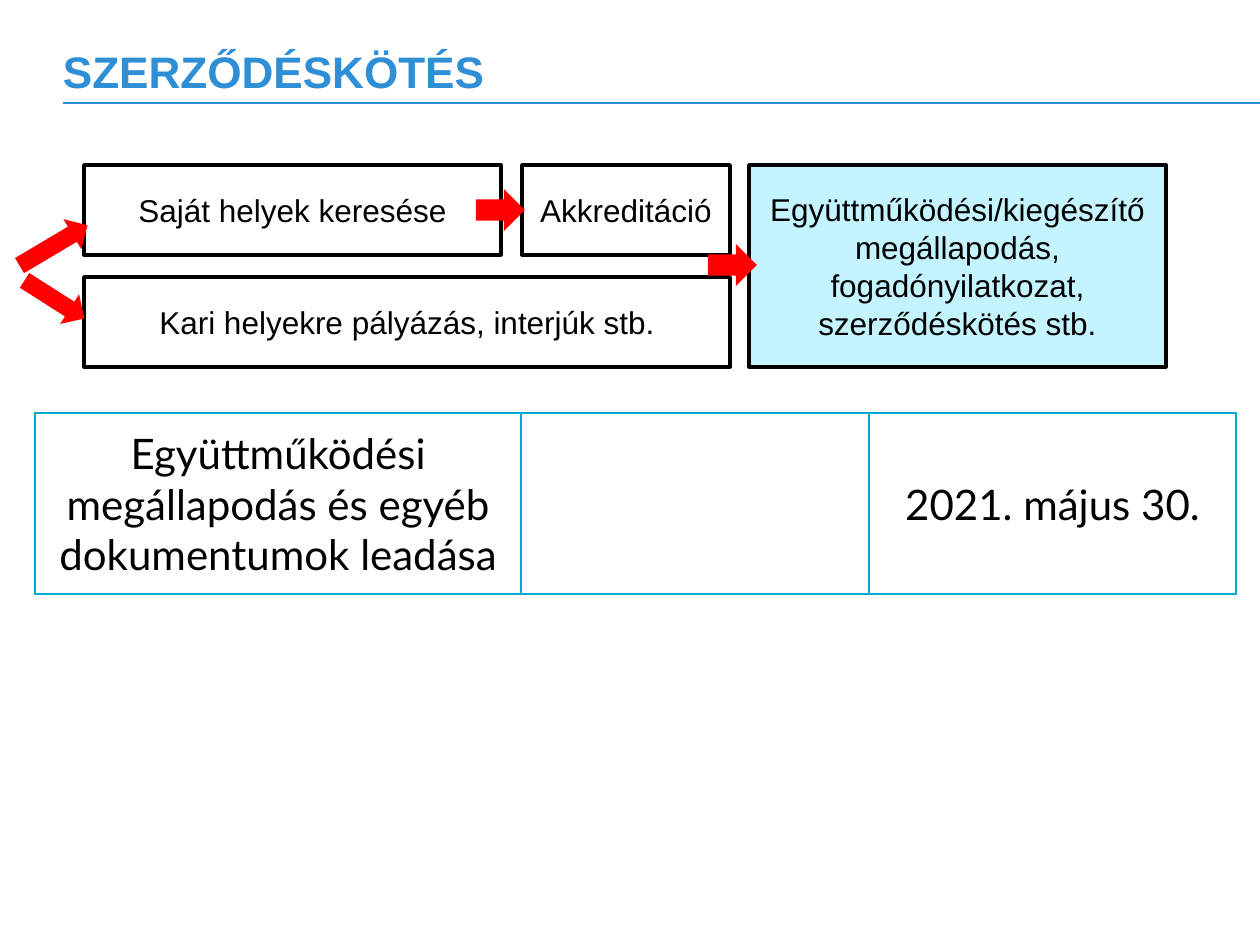
"""Build the contracting slide with its process flow and deadline table."""
from dataclasses import dataclass

from lxml.etree import SubElement
from pptx import Presentation
from pptx.dml.color import RGBColor
from pptx.enum.shapes import MSO_CONNECTOR, MSO_SHAPE
from pptx.enum.text import MSO_ANCHOR, PP_ALIGN
from pptx.oxml.ns import qn
from pptx.slide import Slide
from pptx.table import _Cell
from pptx.text.text import TextFrame
from pptx.util import Emu, Pt

PX_PER_INCH = 126
BLUE = RGBColor(0x2E, 0x8F, 0xD6)
BLACK = RGBColor(0x00, 0x00, 0x00)
WHITE = RGBColor(0xFF, 0xFF, 0xFF)
PALE_CYAN = RGBColor(0xC3, 0xF4, 0xFF)
RED = RGBColor(0xFF, 0x00, 0x00)
TEAL = RGBColor(0x00, 0xAB, 0xD1)

TITLE_FORMAT = {"name": "Arial", "size": Pt(25.2), "bold": True}
STEP_FORMAT = {"name": "Arial", "size": Pt(18)}
DEADLINE_FORMAT = {"name": "Lato", "size": Pt(24)}


@dataclass(frozen=True)
class Step:
    text: str
    left: int
    top: int
    width: int
    height: int = 90
    fill: RGBColor = WHITE


@dataclass(frozen=True)
class Arrow:
    left: int
    top: int
    width: int
    height: int
    rotation: float = 0


STEPS = (
    Step("Saját helyek keresése", 84, 165, 417),
    Step("Kari helyekre pályázás, interjúk stb.", 84, 277, 646),
    Step("Akkreditáció", 522, 165, 208),
    Step("Együttműködési/kiegészítő megállapodás, fogadónyilatkozat, "
         "szerződéskötés stb.", 749, 165, 417, 202, PALE_CYAN),
)
ARROWS = (
    Arrow(19, 282, 71, 35, 32.5),
    Arrow(476, 189, 49, 42),
    Arrow(708, 244, 49, 42),
    Arrow(14, 228, 79, 35, 329.3),
)
DEADLINE_COLUMNS = (
    ("Együttműködési megállapodás és egyéb dokumentumok leadása", 486),
    ("", 348),
    ("2021. május 30.", 367),
)


def px(length: int) -> Emu:
    """Turn pixels into EMU."""
    return Emu(round(length * 914400 / PX_PER_INCH))


def write(frame: TextFrame, text: str, font_format: dict,
          color: RGBColor = BLACK, align: PP_ALIGN = PP_ALIGN.CENTER) -> None:
    """Set a frame's only paragraph with its format."""
    frame.word_wrap = True
    paragraph = frame.paragraphs[0]
    paragraph.alignment = align
    run = paragraph.add_run()
    run.text = text
    for attribute, value in font_format.items():
        setattr(run.font, attribute, value)
    run.font.color.rgb = color


def draw_title(slide: Slide) -> None:
    """Draw the heading and the rule below it."""
    rule = slide.shapes.add_connector(
        MSO_CONNECTOR.STRAIGHT, px(63), px(103), px(1260), px(103))
    rule.line.color.rgb = BLUE
    rule.line.width = Pt(1.5)
    SubElement(rule.line._get_or_add_ln().getparent(), qn("a:effectLst"))
    heading = slide.shapes.add_textbox(px(63), px(51), px(1134), px(39)).text_frame
    for side in ("left", "top", "right", "bottom"):
        setattr(heading, f"margin_{side}", 0)
    heading.vertical_anchor = MSO_ANCHOR.MIDDLE
    write(heading, "SZERZŐDÉSKÖTÉS", TITLE_FORMAT, BLUE, PP_ALIGN.LEFT)


def draw_step(slide: Slide, step: Step) -> None:
    """Draw one outlined process box."""
    box = slide.shapes.add_shape(
        MSO_SHAPE.RECTANGLE, *map(px, (step.left, step.top, step.width, step.height)))
    box.shadow.inherit = False
    box.fill.solid()
    box.fill.fore_color.rgb = step.fill
    box.line.color.rgb = BLACK
    box.line.width = Pt(2)
    box.text_frame.vertical_anchor = MSO_ANCHOR.MIDDLE
    write(box.text_frame, step.text, STEP_FORMAT)


def draw_arrow(slide: Slide, arrow: Arrow) -> None:
    """Draw one red block arrow."""
    pointer = slide.shapes.add_shape(
        MSO_SHAPE.RIGHT_ARROW,
        *map(px, (arrow.left, arrow.top, arrow.width, arrow.height)))
    pointer.shadow.inherit = False
    pointer.rotation = arrow.rotation
    pointer.fill.solid()
    pointer.fill.fore_color.rgb = RED
    pointer.line.fill.background()


def style_cell(cell: _Cell) -> None:
    """Give a cell thin teal borders, a white fill and narrow margins."""
    properties = cell._tc.get_or_add_tcPr()
    for edge in ("lnL", "lnR", "lnT", "lnB"):
        border = SubElement(properties, qn(f"a:{edge}"), w=str(Pt(1)))
        fill = SubElement(border, qn("a:solidFill"))
        SubElement(fill, qn("a:srgbClr"), val=str(TEAL))
    cell.fill.solid()
    cell.fill.fore_color.rgb = WHITE
    cell.vertical_anchor = MSO_ANCHOR.MIDDLE
    for side in ("left", "top", "right"):
        setattr(cell, f"margin_{side}", px(1))
    cell.margin_bottom = 0


def draw_deadlines(slide: Slide) -> None:
    """Draw the one-row deadline table."""
    total_width = sum(width for _, width in DEADLINE_COLUMNS)
    deadlines = slide.shapes.add_table(
        1, len(DEADLINE_COLUMNS), px(35), px(413), px(total_width), px(181)).table
    deadlines.first_row = False
    deadlines.horz_banding = False
    for index, (text, width) in enumerate(DEADLINE_COLUMNS):
        deadlines.columns[index].width = px(width)
        cell = deadlines.cell(0, index)
        style_cell(cell)
        if text:
            write(cell.text_frame, text, DEADLINE_FORMAT)


def main() -> None:
    """Build and save the slide."""
    presentation = Presentation()
    presentation.slide_width = px(1260)
    presentation.slide_height = px(945)
    slide = presentation.slides.add_slide(presentation.slide_layouts[6])
    draw_title(slide)
    for step in STEPS:
        draw_step(slide, step)
    for arrow in ARROWS:
        draw_arrow(slide, arrow)
    draw_deadlines(slide)
    presentation.save("out.pptx")


if __name__ == "__main__":
    main()
